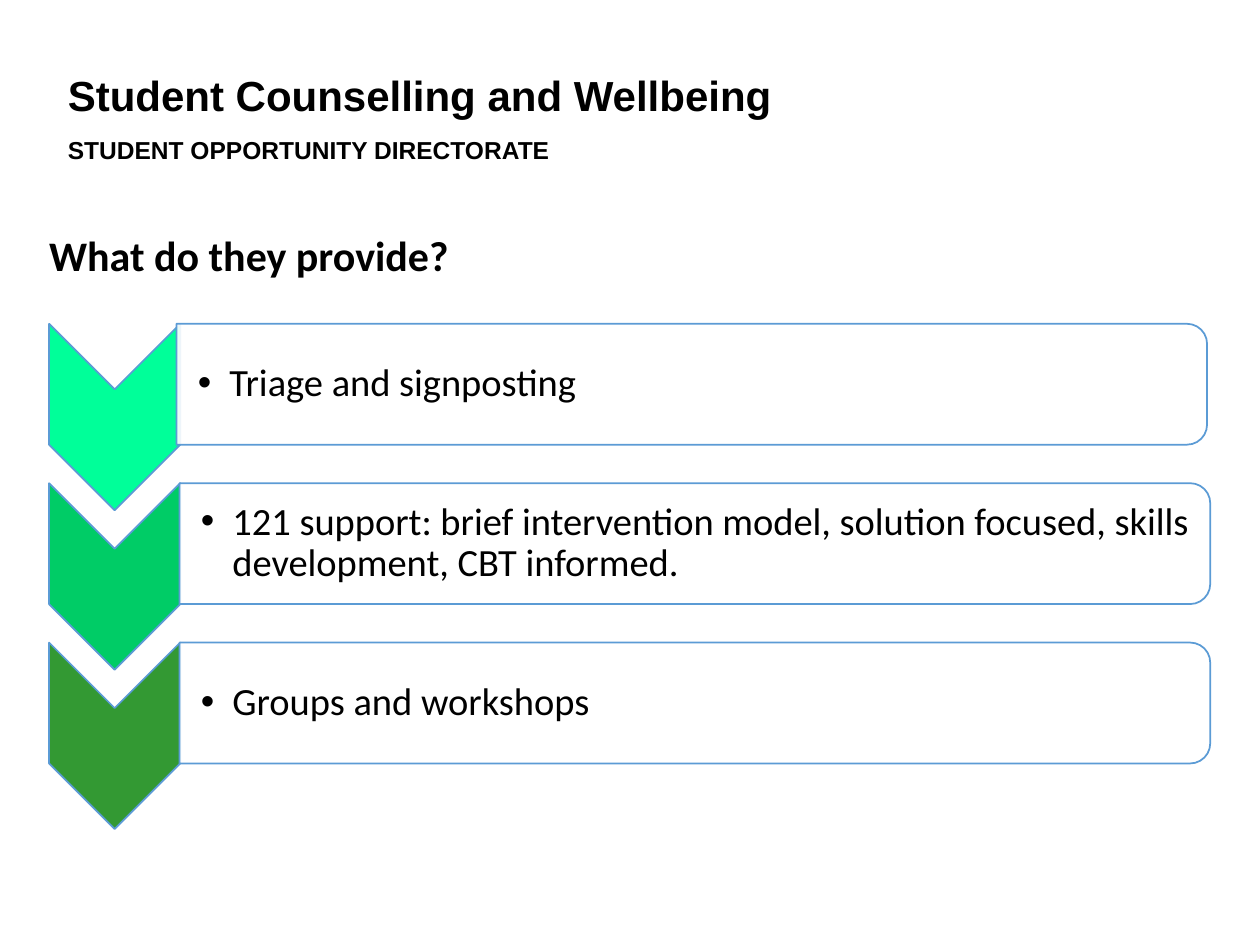
from dataclasses import dataclass

from lxml.etree import SubElement
from pptx import Presentation
from pptx.dml.color import RGBColor
from pptx.enum.shapes import MSO_SHAPE
from pptx.enum.text import MSO_ANCHOR, MSO_AUTO_SIZE, PP_ALIGN
from pptx.oxml.ns import qn
from pptx.util import Emu, Inches, Pt

BLACK = RGBColor(0x00, 0x00, 0x00)
WHITE = RGBColor(0xFF, 0xFF, 0xFF)
BLUE = RGBColor(0x5B, 0x9B, 0xD5)
MINT = RGBColor(0x00, 0xFF, 0x99)
EMERALD = RGBColor(0x00, 0xCC, 0x66)
FOREST = RGBColor(0x33, 0x99, 0x33)

WIDTH, HEIGHT = Inches(10), Inches(7.5)

# Rows of the list: centre of the first panel and distance to the next
FIRST_ROW, ROW_PITCH = Inches(3.05), Inches(1.265)
CHEVRON_X, CHEVRON_DROP = Inches(0.91), Inches(0.26)
CHEVRON_LENGTH, CHEVRON_BREADTH = Inches(1.48), Inches(1.04)
PANEL_WIDTH, PANEL_HEIGHT = Inches(8.18), Inches(0.96)
TEXT_WIDTH, TEXT_HEIGHT = Inches(8.14), Inches(0.87)


@dataclass(frozen=True)
class Service:
    text: str
    color: RGBColor
    left: float  # left edge of the panel, as a share of the slide's width


SERVICES = [
    Service("Triage and signposting", MINT, 0.14),
    Service("121 support: brief intervention model, solution focused, "
            "skills development, CBT informed.", EMERALD, 0.1425),
    Service("Groups and workshops", FOREST, 0.1425),
]


def format_runs(p, font: str, size: int, bold: bool = False) -> None:
    for r in p.runs:
        r.font.name = font
        r.font.size = Pt(size)
        r.font.bold = bold
        r.font.color.rgb = BLACK


def set_margins(tf, left: float, others: float) -> None:
    tf.margin_left = Inches(left)
    tf.margin_top = tf.margin_right = tf.margin_bottom = Inches(others)


def add_turned_shape(s, kind: MSO_SHAPE, cx: int, cy: int, width: int,
                     height: int, color: RGBColor):
    """Draw a shape turned by 90 degrees around its centre."""
    sp = s.shapes.add_shape(kind, Emu(cx - width // 2), Emu(cy - height // 2),
                            width, height)
    sp.rotation = 90
    sp.shadow.inherit = False
    sp.fill.solid()
    sp.fill.fore_color.rgb = color
    sp.line.color.rgb = BLUE
    sp.line.width = Pt(1)
    return sp


def set_opacity(sp, percent: int) -> None:
    color = sp.fill._xPr.find(qn("a:solidFill"))[0]
    SubElement(color, qn("a:alpha"), val=str(percent * 1000))


def add_bullet(p, indent: float) -> None:
    pPr = p._p.get_or_add_pPr()
    pPr.set("marL", str(Inches(indent)))
    pPr.set("indent", str(-Inches(indent)))
    SubElement(pPr, qn("a:buFont"), typeface="Arial")
    SubElement(pPr, qn("a:buChar"), char="•")


def add_service(s, row: int, service: Service) -> None:
    cy = FIRST_ROW + row * ROW_PITCH
    left = int(WIDTH * service.left)
    add_turned_shape(s, MSO_SHAPE.CHEVRON, CHEVRON_X, cy + CHEVRON_DROP,
                     CHEVRON_LENGTH, CHEVRON_BREADTH, service.color)
    panel = add_turned_shape(s, MSO_SHAPE.ROUND_2_SAME_RECTANGLE,
                             left + PANEL_WIDTH // 2, cy,
                             PANEL_HEIGHT, PANEL_WIDTH, WHITE)
    set_opacity(panel, 90)

    tf = s.shapes.add_textbox(left, Emu(cy - TEXT_HEIGHT // 2),
                              TEXT_WIDTH, TEXT_HEIGHT).text_frame
    tf.word_wrap = True
    tf.vertical_anchor = MSO_ANCHOR.MIDDLE
    set_margins(tf, 0.17, 0.02)
    p = tf.paragraphs[0]
    p.text = service.text
    add_bullet(p, 0.25)
    p.line_spacing = 0.9
    format_runs(p, "Calibri", 22)


def add_header(s) -> None:
    tf = s.shapes.add_textbox(Inches(0.44), Inches(0.55),
                              Inches(6.36), Inches(0.91)).text_frame
    tf.word_wrap = True
    tf.text = "Student Counselling and Wellbeing\nSTUDENT OPPORTUNITY DIRECTORATE"
    for p, size in zip(tf.paragraphs, (24, 14)):
        p.line_spacing = 0.9
        format_runs(p, "Arial", size, bold=True)
    tf.paragraphs[1].space_before = Pt(10)


def set_title(s, text: str) -> None:
    title = s.shapes.title
    title.left, title.top = Inches(0.39), Inches(1.82)
    title.width, title.height = Inches(9.18), Inches(0.59)
    tf = title.text_frame
    tf.text = text
    tf.word_wrap = True
    tf.auto_size = MSO_AUTO_SIZE.NONE
    tf.vertical_anchor = MSO_ANCHOR.TOP
    set_margins(tf, 0, 0)
    p = tf.paragraphs[0]
    p.alignment = PP_ALIGN.LEFT
    format_runs(p, "Calibri", 24, bold=True)


def main() -> None:
    prs = Presentation()
    prs.slide_width, prs.slide_height = WIDTH, HEIGHT
    s = prs.slides.add_slide(prs.slide_layouts.get_by_name("Title Only"))
    s.background.fill.solid()
    s.background.fill.fore_color.rgb = WHITE
    add_header(s)
    set_title(s, "What do they provide?")
    for row, service in enumerate(SERVICES):
        add_service(s, row, service)
    prs.save("out.pptx")


if __name__ == "__main__":
    main()
